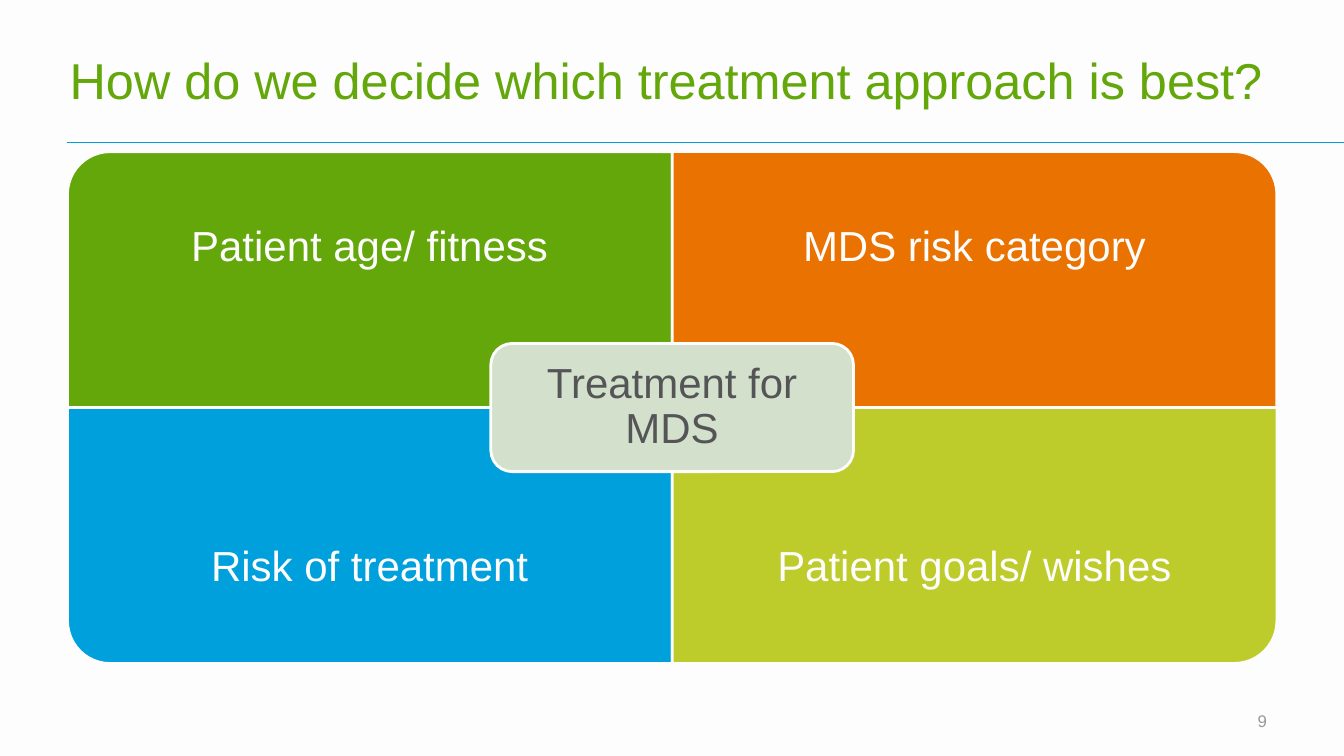
from pptx import Presentation
from pptx.dml.color import RGBColor
from pptx.enum.shapes import MSO_CONNECTOR, MSO_SHAPE
from pptx.enum.text import MSO_ANCHOR as Anchor, MSO_AUTO_SIZE, PP_ALIGN as Align
from pptx.oxml.ns import qn
from pptx.util import Cm, Pt
from lxml.etree import SubElement

PAPER = RGBColor(0xFD, 0xFD, 0xFD)
GREEN = RGBColor(0x63, 0xA7, 0x0A)
ORANGE = RGBColor(0xEA, 0x72, 0x00)
BLUE = RGBColor(0x00, 0xA0, 0xDD)
LIME = RGBColor(0xBD, 0xCC, 0x2A)
SAGE = RGBColor(0xD3, 0xE1, 0xCC)
DARK_GREY = RGBColor(0x55, 0x55, 0x57)
MID_GREY = RGBColor(0x99, 0x99, 0x9A)

PAGE_WIDTH, PAGE_HEIGHT = 33.87, 19.05
LEFT, TOP = 1.7, 3.82
TILE_WIDTH, TILE_HEIGHT = 15.24, 6.45
LABEL_HEIGHT = 4.84
HUB_WIDTH, HUB_HEIGHT = 9.14, 3.23

# Label, colour, column, row, rotation that turns the round corner outwards
FACTORS = [
    ("Patient age/ fitness", GREEN, 0, 0, 270),
    ("MDS risk category", ORANGE, 1, 0, 0),
    ("Risk of treatment", BLUE, 0, 1, 180),
    ("Patient goals/ wishes", LIME, 1, 1, 90),
]


class SlideBuilder:
    """Holds the page and its style; all lengths are in centimetres."""

    font_name = "Arial"

    def __init__(self, page):
        self.page = page
        page.background.fill.solid()
        page.background.fill.fore_color.rgb = PAPER

    def set_text(self, shape, text, size, color, align, anchor=Anchor.MIDDLE,
                 inset=None, spacing=1.0):
        frame = shape.text_frame
        frame.text = text
        frame.word_wrap = True
        frame.auto_size = MSO_AUTO_SIZE.NONE
        frame.vertical_anchor = anchor
        if inset is not None:
            frame.margin_left = frame.margin_right = Cm(inset)
            frame.margin_top = frame.margin_bottom = Cm(inset)
        para = frame.paragraphs[0]
        para.alignment = align
        para.line_spacing = spacing
        para.font.name = self.font_name
        para.font.size = Pt(size)
        para.font.color.rgb = color

    def title(self, text, left, top, width, height):
        title = self.page.shapes.title
        title.left, title.top = Cm(left), Cm(top)
        title.width, title.height = Cm(width), Cm(height)
        self.set_text(title, text, 36, GREEN, Align.LEFT, Anchor.BOTTOM)

    def rule(self, left, right, top):
        line = self.page.shapes.add_connector(
            MSO_CONNECTOR.STRAIGHT, Cm(left), Cm(top), Cm(right), Cm(top))
        line.line.color.rgb = BLUE
        line.line.width = Pt(0.75)
        SubElement(line._element.spPr, qn("a:effectLst"))

    def label(self, text, left, top, width, height, size, color, align, **style):
        box = self.page.shapes.add_textbox(Cm(left), Cm(top), Cm(width), Cm(height))
        self.set_text(box, text, size, color, align, **style)

    def panel(self, kind, left, top, width, height, color, rotation=0):
        """Add a filled shape that covers the given area after its rotation."""
        if rotation % 180:
            left, top = left + (width - height) / 2, top + (height - width) / 2
            width, height = height, width
        shape = self.page.shapes.add_shape(
            kind, Cm(left), Cm(top), Cm(width), Cm(height))
        shape.rotation = rotation
        shape.shadow.inherit = False
        shape.fill.solid()
        shape.fill.fore_color.rgb = color
        shape.line.color.rgb = PAPER
        shape.line.width = Pt(2)
        return shape


def main():
    deck = Presentation()
    deck.slide_width, deck.slide_height = Cm(PAGE_WIDTH), Cm(PAGE_HEIGHT)
    builder = SlideBuilder(deck.slides.add_slide(deck.slide_layouts[5]))

    builder.title("How do we decide which treatment approach is best?",
                  1.5, -0.3, 30.66, 3.18)
    builder.rule(LEFT, PAGE_WIDTH, 3.6)

    for text, color, column, row, rotation in FACTORS:
        left = LEFT + column * TILE_WIDTH
        top = TOP + row * TILE_HEIGHT
        builder.panel(MSO_SHAPE.ROUND_1_RECTANGLE, left, top,
                      TILE_WIDTH, TILE_HEIGHT, color, rotation)
        label_top = top + row * (TILE_HEIGHT - LABEL_HEIGHT)
        builder.label(text, left, label_top, TILE_WIDTH, LABEL_HEIGHT,
                      30, PAPER, Align.CENTER, inset=0.59, spacing=0.9)

    hub = builder.panel(MSO_SHAPE.ROUNDED_RECTANGLE,
                        LEFT + TILE_WIDTH - HUB_WIDTH / 2,
                        TOP + TILE_HEIGHT - HUB_HEIGHT / 2,
                        HUB_WIDTH, HUB_HEIGHT, SAGE)
    builder.set_text(hub, "Treatment for MDS", 30, DARK_GREY, Align.CENTER,
                     inset=0.3, spacing=0.9)

    builder.label("9", 30.48, 17.65, 1.7, 1.02, 12, MID_GREY, Align.RIGHT)
    deck.save("out.pptx")


if __name__ == "__main__":
    main()
